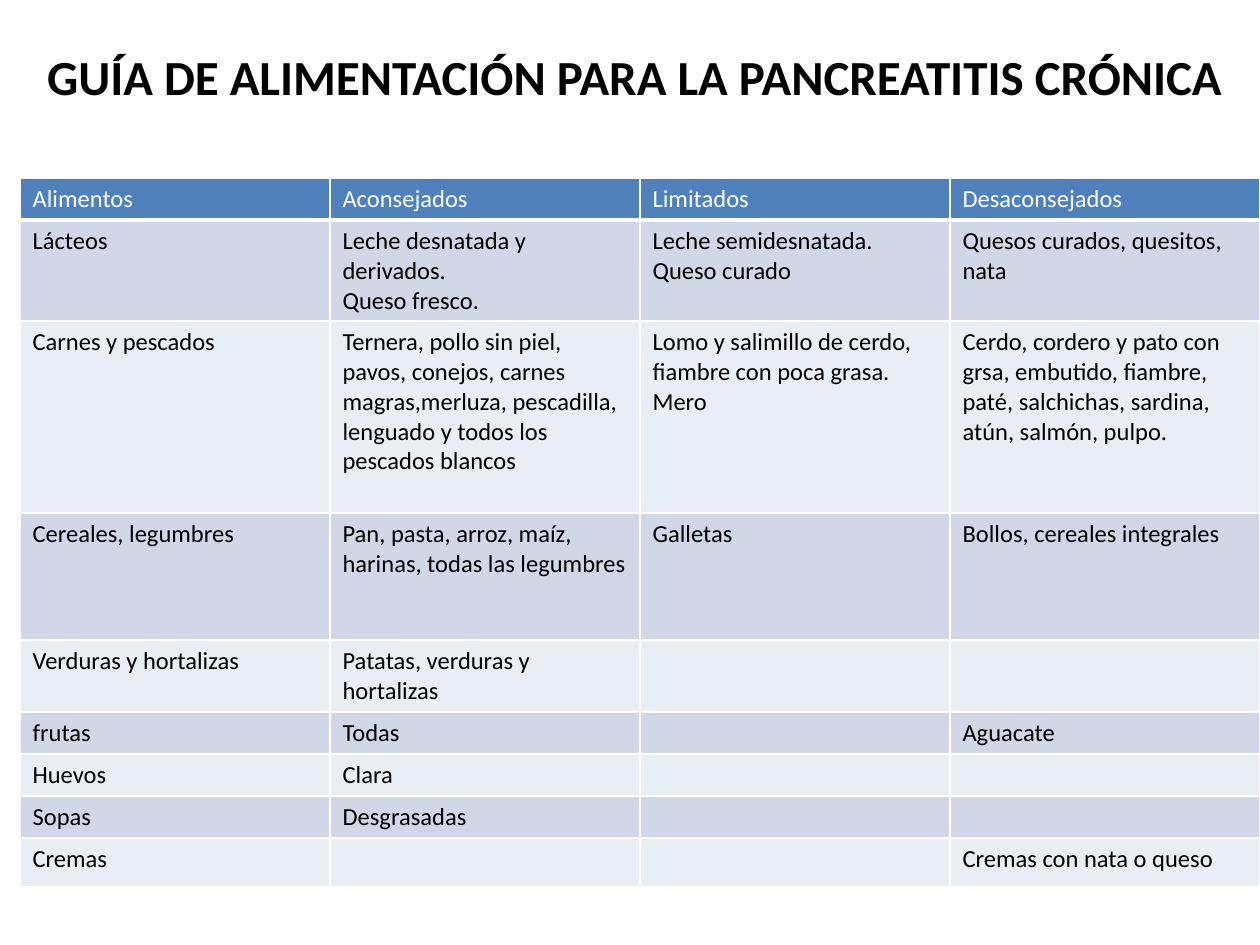
from lxml.etree import SubElement
from pptx import Presentation
from pptx.dml.color import RGBColor
from pptx.enum.text import MSO_ANCHOR, PP_ALIGN
from pptx.oxml.ns import qn
from pptx.util import Emu, Pt

ROW_HEIGHTS = [42, 101, 192, 127, 72, 42, 42, 42, 49]
FOODS = [
    ["Alimentos", "Aconsejados", "Limitados", "Desaconsejados"],
    ["Lácteos", "Leche desnatada y derivados.\nQueso fresco.",
     "Leche semidesnatada.\nQueso curado", "Quesos curados, quesitos, nata"],
    ["Carnes y pescados",
     "Ternera, pollo sin piel, pavos, conejos, carnes magras,merluza, "
     "pescadilla, lenguado y todos los pescados blancos",
     "Lomo y salimillo de cerdo, fiambre con poca grasa. Mero",
     "Cerdo, cordero y pato con grsa, embutido, fiambre, paté, salchichas, "
     "sardina, atún, salmón, pulpo."],
    ["Cereales, legumbres", "Pan, pasta, arroz, maíz, harinas, todas las legumbres",
     "Galletas", "Bollos, cereales integrales"],
    ["Verduras y hortalizas", "Patatas, verduras y hortalizas", "", ""],
    ["frutas", "Todas", "", "Aguacate"],
    ["Huevos", "Clara", "", ""],
    ["Sopas", "Desgrasadas", "", ""],
    ["Cremas", "", "", "Cremas con nata o queso"],
]


def px(length):
    return Emu(round(length * 914400 / 126))


def color(value):
    return RGBColor.from_string(value)


def write(frame, text, size=14, fill="000000", bold=False, align=PP_ALIGN.LEFT):
    frame.word_wrap = True
    for index, line in enumerate(text.split("\n")):
        paragraph = frame.add_paragraph() if index else frame.paragraphs[0]
        paragraph.alignment = align
        if not line:
            SubElement(paragraph._p, qn("a:endParaRPr"), sz=str(size * 100))
            continue
        run = paragraph.add_run()
        run.text = line
        run.font.name = "Calibri"
        run.font.size = Pt(size)
        run.font.bold = bold
        run.font.color.rgb = color(fill)


class SlideBuilder:
    header = "4F81BD"
    bands = ["E9EDF4", "D0D8E8"]
    border = "FFFFFF"

    def __init__(self, slide):
        self.slide = slide

    def title(self, text, left, top, width, height):
        frame = self.slide.shapes.add_textbox(px(left), px(top), px(width), px(height)).text_frame
        frame.vertical_anchor = MSO_ANCHOR.TOP
        write(frame, text, size=28, bold=True, align=PP_ALIGN.CENTER)

    def borders(self, cell, bottom):
        properties = cell._tc.get_or_add_tcPr()
        widths = {"a:lnL": 1, "a:lnR": 1, "a:lnT": 1, "a:lnB": bottom}
        for position, (side, width) in enumerate(widths.items()):
            line = SubElement(properties, qn(side), w=str(Pt(width)))
            solid = SubElement(line, qn("a:solidFill"))
            SubElement(solid, qn("a:srgbClr"), val=self.border)
            properties.insert(position, line)

    def table(self, rows, left, top, column_width, heights):
        columns = len(rows[0])
        table = self.slide.shapes.add_table(
            len(rows), columns, px(left), px(top),
            px(column_width * columns), px(sum(heights))).table
        for column in table.columns:
            column.width = px(column_width)
        for number, (texts, height) in enumerate(zip(rows, heights)):
            table.rows[number].height = px(height)
            is_header = number == 0
            for cell, text in zip(table.rows[number].cells, texts):
                cell.fill.solid()
                cell.fill.fore_color.rgb = color(self.header if is_header else self.bands[number % 2])
                self.borders(cell, bottom=3 if is_header else 1)
                write(cell.text_frame, text, fill="FFFFFF" if is_header else "000000")


def main():
    presentation = Presentation()
    presentation.slide_width = px(1260)
    presentation.slide_height = px(945)
    builder = SlideBuilder(presentation.slides.add_slide(presentation.slide_layouts[6]))
    builder.title("GUÍA DE ALIMENTACIÓN PARA LA PANCREATITIS CRÓNICA", 29, 40, 1211, 88)
    builder.table(FOODS, 20, 178, 310, ROW_HEIGHTS)
    presentation.save("out.pptx")


if __name__ == "__main__":
    main()
